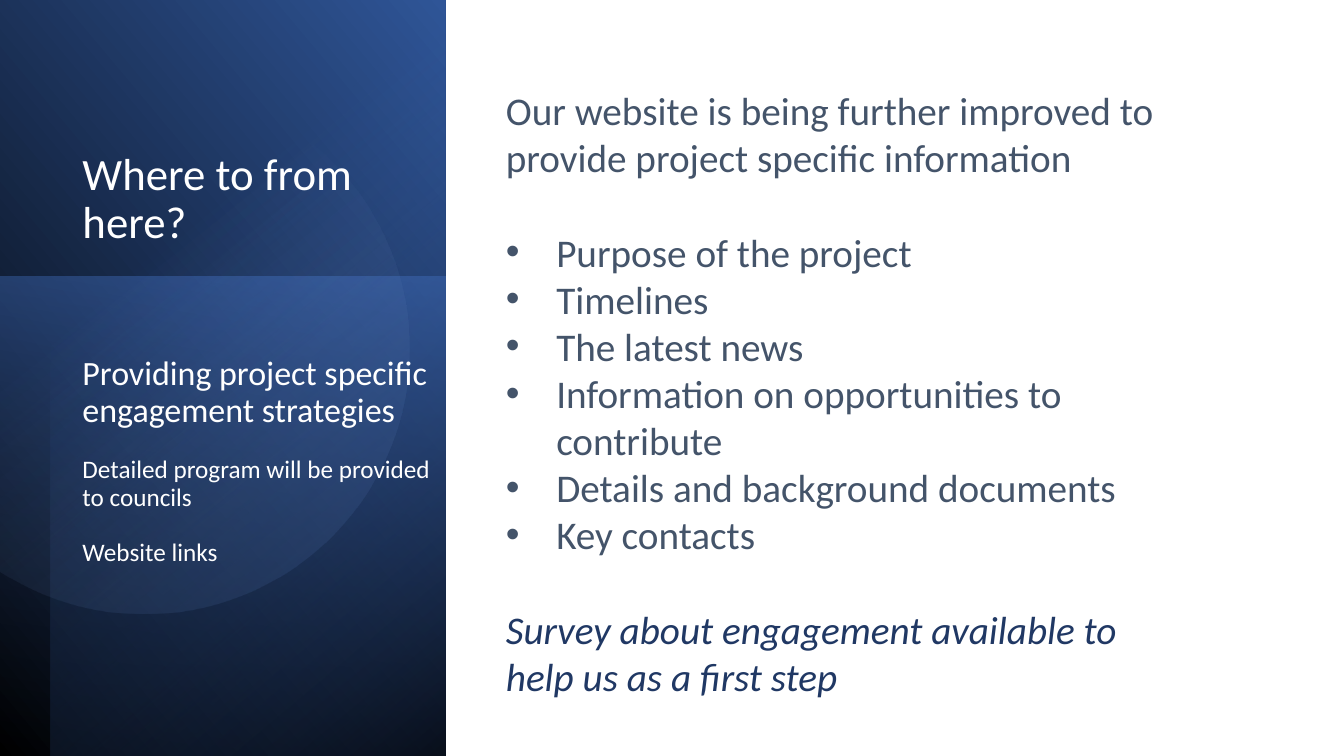
from dataclasses import dataclass
from math import acos, cos, radians, sin

from lxml.etree import SubElement
from pptx import Presentation
from pptx.dml.color import RGBColor
from pptx.enum.shapes import MSO_SHAPE
from pptx.enum.text import MSO_ANCHOR
from pptx.oxml.ns import qn
from pptx.util import Cm, Pt


@dataclass(frozen=True)
class Theme:
    font: str = "Calibri"
    white: str = "FFFFFF"
    black: str = "000000"
    slate: str = "44546A"
    navy: str = "203864"
    royal: str = "2F5597"
    blue: str = "4472C4"
    pale: str = "8FAADC"
    title: float = 32
    lead: float = 24.3
    detail: float = 18
    body: float = 28


THEME = Theme()
WEBSITE_TOPICS = (
    "Purpose of the project",
    "Timelines",
    "The latest news",
    "Information on opportunities to contribute",
    "Details and background documents",
    "Key contacts",
)


def set_gradient(shape, angle, stops):
    """Fill with (position, colour, opacity) stops, all in percent."""
    shape.shadow.inherit = False
    shape.line.fill.background()
    shape.fill.background()
    properties = shape._element.spPr
    empty_fill = properties.find(qn("a:noFill"))
    gradient = SubElement(properties, qn("a:gradFill"), rotWithShape="1")
    stop_list = SubElement(gradient, qn("a:gsLst"))
    for position, color, opacity in stops:
        stop = SubElement(stop_list, qn("a:gs"), pos=str(position * 1000))
        tint = SubElement(stop, qn("a:srgbClr"), val=color)
        if opacity < 100:
            SubElement(tint, qn("a:alpha"), val=str(opacity * 1000))
    SubElement(gradient, qn("a:lin"), ang=str(angle * 60000), scaled="0")
    properties.replace(empty_fill, gradient)


def add_panel(slide, place, rotation, flipped, angle, stops):
    panel = slide.shapes.add_shape(MSO_SHAPE.RECTANGLE, *map(Cm, place))
    panel.rotation = rotation
    if flipped:
        panel._element.spPr.find(qn("a:xfrm")).set("flipH", "1")
    set_gradient(panel, angle, stops)


def add_clipped_disc(slide, center, radius, pivot, rotation, angle, stops):
    """Draw a disc cut off by the slide's left edge, in a frame turned about the pivot."""
    limit = acos(-center[0] / radius)
    turn = radians(-rotation)
    steps = 90
    points = []
    for step in range(steps + 1):
        sweep = limit * (2 * step / steps - 1)
        x = center[0] + radius * cos(sweep) - pivot[0]
        y = center[1] + radius * sin(sweep) - pivot[1]
        points.append((Cm(pivot[0] + x * cos(turn) - y * sin(turn)),
                       Cm(pivot[1] + x * sin(turn) + y * cos(turn))))
    builder = slide.shapes.build_freeform(*points[0])
    builder.add_line_segments(points[1:], close=True)
    disc = builder.convert_to_shape()
    disc.rotation = rotation
    set_gradient(disc, angle, stops)


def add_text_box(slide, place, **frame_format):
    box = slide.shapes.add_textbox(*map(Cm, place))
    frame = box.text_frame
    for name, value in {"word_wrap": True, **frame_format}.items():
        setattr(frame, name, value)
    return frame


def add_para(frame, text, size, color, italic=False, bullet=False, **para_format):
    first = frame.paragraphs[0]
    para = frame.add_paragraph() if first.runs else first
    for name, value in para_format.items():
        setattr(para, name, value)
    if bullet:
        add_bullet(para)
    span = para.add_run()
    span.text = text
    span.font.color.rgb = RGBColor.from_string(color)
    for name, value in {"name": THEME.font, "size": Pt(size), "italic": italic}.items():
        setattr(span.font, name, value)


def add_bullet(para):
    properties = para._p.get_or_add_pPr()
    indent = Cm(1.27)
    properties.set("marL", str(indent))
    properties.set("indent", str(-indent))
    SubElement(properties, qn("a:buFont"), typeface="Arial")
    SubElement(properties, qn("a:buChar"), char="•")


def add_side_panel(slide):
    add_panel(slide, (-3.94, 3.94, 19.1, 11.23), 90, True, 310,
              [(0, THEME.black, 100), (100, THEME.royal, 100)])
    add_panel(slide, (-0.43, 7.39, 12.09, 11.23), 270, False, 190,
              [(0, THEME.blue, 50), (100, THEME.navy, 0)])
    add_panel(slide, (-3.28, 4.55, 19.05, 9.96), 270, True, 220,
              [(0, THEME.black, 59), (69, THEME.blue, 0)])
    add_clipped_disc(slide, (3.64, 8.81), 6.67, (4.6, 9.0), 101.6, 310,
                     [(39, THEME.pale, 0), (100, THEME.royal, 26)])


def add_side_text(slide):
    title = add_text_box(slide, (1.83, 2.24, 8.64, 4.14), vertical_anchor=MSO_ANCHOR.BOTTOM)
    add_para(title, "Where to from here?", THEME.title, THEME.white, line_spacing=0.9)

    strategy = add_text_box(slide, (1.83, 6.96, 9.37, 9.02), margin_top=Cm(2.01))
    add_para(strategy, "Providing project specific engagement strategies",
             THEME.lead, THEME.white, line_spacing=0.9)
    for text in ("Detailed program will be provided to councils", "Website links"):
        add_para(strategy, text, THEME.detail, THEME.white,
                 line_spacing=0.9, space_before=Pt(19.8))


def add_website_text(slide):
    website = add_text_box(slide, (12.5, 0.84, 16.94, 17.02), margin_top=Cm(1.33))
    gap = Pt(34)
    add_para(website, "Our website is being further improved to provide project specific information",
             THEME.body, THEME.slate, space_after=gap)
    for topic in WEBSITE_TOPICS:
        add_para(website, topic, THEME.body, THEME.slate, bullet=True)
    add_para(website, "Survey about engagement available to help us as a first step",
             THEME.body, THEME.navy, italic=True, space_before=gap)


def main():
    deck = Presentation()
    deck.slide_width, deck.slide_height = Cm(33.87), Cm(19.05)
    page = deck.slides.add_slide(deck.slide_layouts[6])
    add_side_panel(page)
    add_side_text(page)
    add_website_text(page)
    deck.save("out.pptx")


if __name__ == "__main__":
    main()
